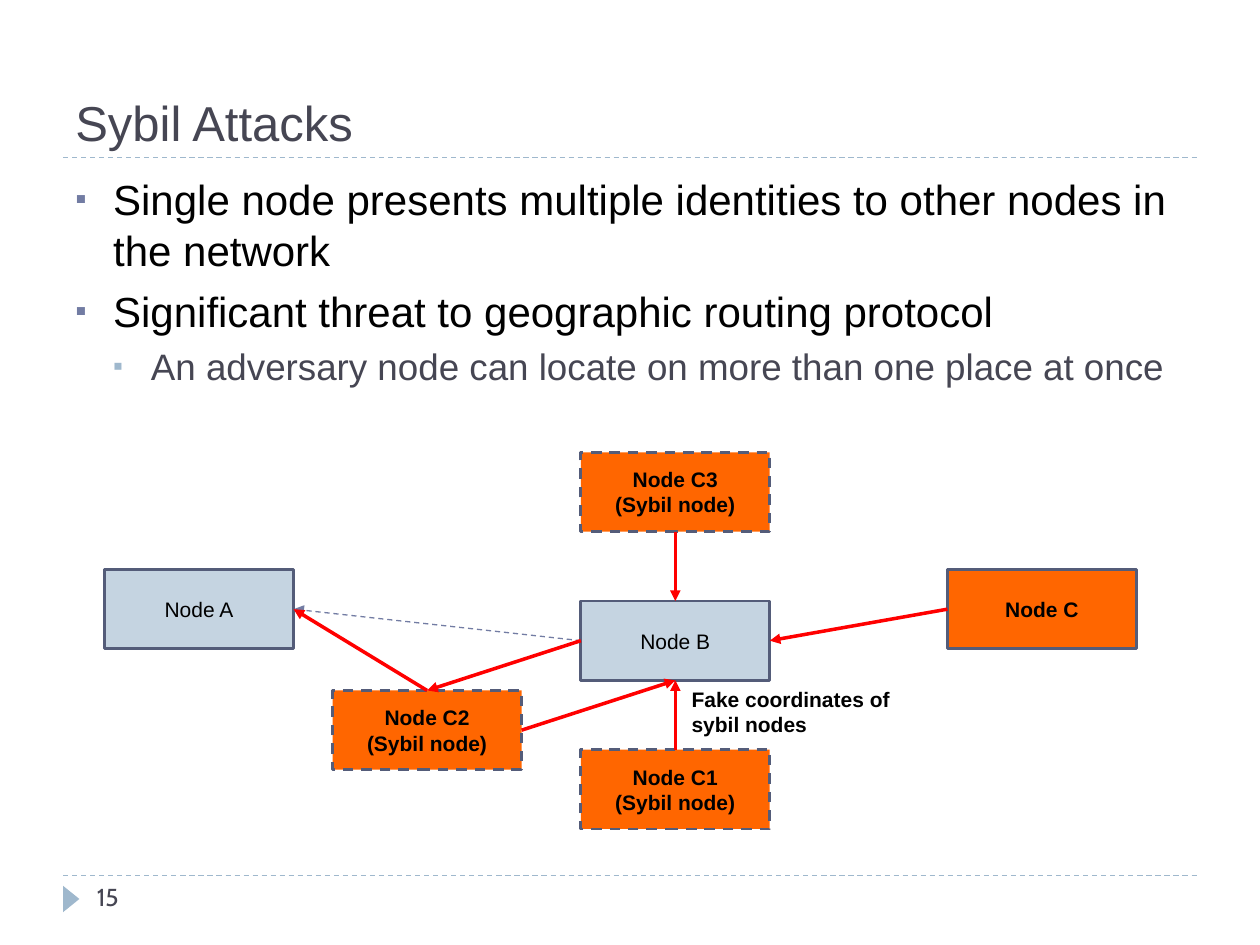
from lxml import etree
from pptx import Presentation
from pptx import util as u
from pptx.dml.color import RGBColor
from pptx.enum import dml, shapes, text
from pptx.oxml.ns import qn

BLACK = RGBColor(0x00, 0x00, 0x00)
SLATE = RGBColor(0x46, 0x46, 0x53)
INDIGO = RGBColor(0x72, 0x7C, 0xA3)
SKY = RGBColor(0x9F, 0xB8, 0xCD)
PALE = RGBColor(0xC5, 0xD4, 0xE1)
ORANGE = RGBColor(0xFF, 0x66, 0x00)
BORDER = RGBColor(0x54, 0x5C, 0x79)
RED = RGBColor(0xFF, 0x00, 0x00)

TOP, LEFT, BOTTOM, RIGHT = range(4)
NODE_W, NODE_H = 1.5, 0.63

NODES = {
    "A": (0.83, 4.52, ["Node A"]),
    "C": (7.52, 4.52, ["Node C"]),
    "B": (4.61, 4.77, ["Node B"]),
    "C2": (2.64, 5.48, ["Node C2", "(Sybil node)"]),
    "C3": (4.61, 3.59, ["Node C3", "(Sybil node)"]),
    "C1": (4.61, 5.95, ["Node C1", "(Sybil node)"]),
}
ATTACKS = [
    ("C", LEFT, "B", RIGHT),
    ("C3", BOTTOM, "B", TOP),
    ("C1", TOP, "B", BOTTOM),
    ("C2", RIGHT, "B", BOTTOM),
    ("B", LEFT, "C2", TOP),
    ("C2", TOP, "A", RIGHT),
]
BULLETS = [
    ("Single node presents multiple identities to other nodes in the network", 0),
    ("Significant threat to geographic routing protocol", 0),
    ("An adversary node can locate on more than one place at once", 1),
]
LEVELS = [(24, BLACK, INDIGO, 6), (21, SLATE, SKY, 5)]


def add_run(p, words, size, color, bold=False, font="Arial"):
    r = p.add_run()
    r.text = words
    r.font.name = font
    r.font.size = u.Pt(size)
    r.font.bold = bold
    r.font.color.rgb = color


def add_text_box(s, x, y, w, h, anchor=text.MSO_ANCHOR.TOP):
    tf = s.shapes.add_textbox(*map(u.Inches, (x, y, w, h))).text_frame
    tf.word_wrap = True
    tf.vertical_anchor = anchor
    return tf


def set_bullet(p, level, color):
    pPr = p._p.get_or_add_pPr()
    pPr.set("marL", str(u.Inches(0.3 * (level + 1))))
    pPr.set("indent", str(u.Inches(-0.3)))
    clr = etree.SubElement(pPr, qn("a:buClr"))
    etree.SubElement(clr, qn("a:srgbClr"), val=str(color))
    etree.SubElement(pPr, qn("a:buSzPct"), val="76000")
    etree.SubElement(pPr, qn("a:buFont"), typeface="Arial")
    etree.SubElement(pPr, qn("a:buChar"), char="▪")


def add_bullets(s):
    tf = add_text_box(s, 0.5, 1.33, 9, 5.4)
    for i, (words, level) in enumerate(BULLETS):
        size, color, bullet_color, before = LEVELS[level]
        p = tf.add_paragraph() if i else tf.paragraphs[0]
        p.level = level
        p.space_before = u.Pt(before)
        set_bullet(p, level, bullet_color)
        add_run(p, words, size, color)


def add_line(s, x1, y1, x2, y2, color, width, dashed=False):
    ln = s.shapes.add_connector(
        shapes.MSO_CONNECTOR.STRAIGHT, *map(u.Inches, (x1, y1, x2, y2)))
    ln.line.color.rgb = color
    ln.line.width = u.Pt(width)
    if dashed:
        ln.line.dash_style = dml.MSO_LINE.DASH
    etree.SubElement(ln._element.spPr, qn("a:effectLst"))
    return ln


def add_arrow(s, start, start_site, end, end_site, color=RED, width=2, dashed=False):
    ln = add_line(s, 0, 0, 1, 1, color, width, dashed)
    ln.begin_connect(start, start_site)
    ln.end_connect(end, end_site)
    etree.SubElement(ln.line._get_or_add_ln(), qn("a:tailEnd"), type="triangle")


def add_node(s, name, x, y, lines):
    hostile = name.startswith("C")
    sp = s.shapes.add_shape(
        shapes.MSO_SHAPE.RECTANGLE, *map(u.Inches, (x, y, NODE_W, NODE_H)))
    sp.shadow.inherit = False
    sp.fill.solid()
    sp.fill.fore_color.rgb = ORANGE if hostile else PALE
    sp.line.color.rgb = BORDER
    sp.line.width = u.Pt(1.5)
    if len(lines) > 1:
        sp.line.dash_style = dml.MSO_LINE.DASH
    tf = sp.text_frame
    tf.vertical_anchor = text.MSO_ANCHOR.MIDDLE
    for i, words in enumerate(lines):
        p = tf.add_paragraph() if i else tf.paragraphs[0]
        p.alignment = text.PP_ALIGN.CENTER
        add_run(p, words, 12, BLACK, bold=hostile)
    return sp


def add_page_marker(s):
    sp = s.shapes.add_shape(
        shapes.MSO_SHAPE.ISOSCELES_TRIANGLE, *map(u.Inches, (0.46, 7.07, 0.21, 0.13)))
    sp.rotation = 90
    sp.shadow.inherit = False
    sp.fill.solid()
    sp.fill.fore_color.rgb = SKY
    sp.line.fill.background()
    tf = add_text_box(s, 0.67, 6.95, 2.17, 0.4)
    add_run(tf.paragraphs[0], "15", 14, SLATE, font="Cabin")


def add_diagram(s):
    nodes = {name: add_node(s, name, *spec) for name, spec in NODES.items()}
    add_arrow(s, nodes["B"], LEFT, nodes["A"], RIGHT, INDIGO, 0.75, True)
    for start, start_site, end, end_site in ATTACKS:
        add_arrow(s, nodes[start], start_site, nodes[end], end_site)
    tf = add_text_box(s, 5.39, 5.4, 1.81, 0.5)
    add_run(tf.paragraphs[0], "Fake coordinates of sybil nodes", 12, BLACK, bold=True)


def main():
    prs = Presentation()
    prs.slide_width, prs.slide_height = u.Inches(10), u.Inches(7.5)
    s = prs.slides.add_slide(prs.slide_layouts[6])
    for y in (6.95, 1.25):
        add_line(s, 0.5, y, 9.5, y, SKY, 0.75, True)
    add_page_marker(s)
    tf = add_text_box(s, 0.5, 0.17, 9, 1.08, text.MSO_ANCHOR.BOTTOM)
    add_run(tf.paragraphs[0], "Sybil Attacks", 28, SLATE)
    add_bullets(s)
    add_diagram(s)
    prs.save("out.pptx")


if __name__ == "__main__":
    main()
